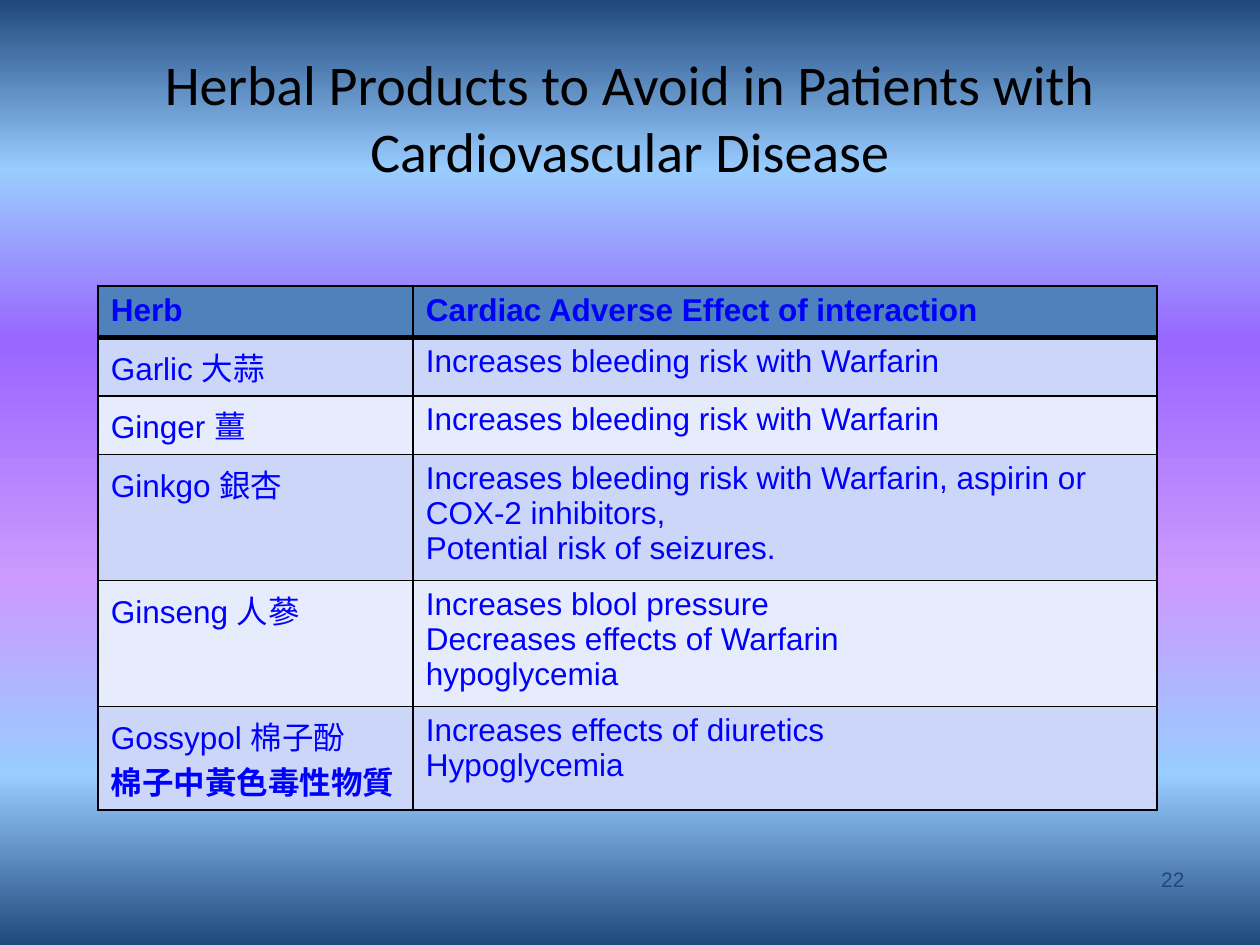
from lxml import etree
from pptx import Presentation
from pptx.dml.color import RGBColor
from pptx.enum import text
from pptx.oxml import ns
from pptx.util import Cm, Pt

COLORS = {
    "title": "000000", "border": "000000", "body": "0000FF", "number": "1F497D",
    "header": "4F81BD", "odd": "CBD6F9", "even": "E7ECFC",
}
GRADIENT = [(0, "1F497D"), (18, "99CCFF"), (36, "9966FF"),
            (61, "CC99FF"), (82, "99CCFF"), (100, "1F497D")]
TITLE = "Herbal Products to Avoid in Patients with Cardiovascular Disease"
NUMBER = "22"
ROWS = [
    (["Herb"], ["Cardiac Adverse Effect of interaction"]),
    (["Garlic 大蒜"], ["Increases bleeding risk with Warfarin"]),
    (["Ginger 薑"], ["Increases bleeding risk with Warfarin"]),
    (["Ginkgo 銀杏"],
     ["Increases bleeding risk with Warfarin, aspirin or COX-2 inhibitors,",
      "Potential risk of seizures."]),
    (["Ginseng 人蔘"],
     ["Increases blool pressure", "Decreases effects of Warfarin", "hypoglycemia"]),
    (["Gossypol 棉子酚", "棉子中黃色毒性物質"],
     ["Increases effects of diuretics", "Hypoglycemia"]),
]
BOLD = {"Herb", "Cardiac Adverse Effect of interaction", "棉子中黃色毒性物質"}
COLUMN_WIDTHS = [6.35, 14.99]
ROW_HEIGHTS = [1.04, 1.04, 1.04, 2.54, 2.54, 1.78]


def add_element(parent, tag, **attributes):
    return etree.SubElement(parent, ns.qn(tag), attributes)


def paint_background(slide):
    fill = slide.background.fill
    fill.gradient()
    fill.gradient_angle = 270
    stops = fill._fill._gradFill.find(ns.qn("a:gsLst"))
    for stop in list(stops):
        stops.remove(stop)
    for percent, color in GRADIENT:
        stop = add_element(stops, "a:gs", pos=str(percent * 1000))
        add_element(stop, "a:srgbClr", val=color)


def write_paragraphs(frame, lines, font, size, color, alignment):
    for index, line in enumerate(lines):
        paragraph = frame.add_paragraph() if index else frame.paragraphs[0]
        paragraph.alignment = alignment
        run = paragraph.add_run()
        run.text = line
        run.font.name = font
        run.font.size = Pt(size)
        run.font.bold = line in BOLD
        run.font.color.rgb = RGBColor.from_string(COLORS[color])


def set_borders(cell, widths):
    properties = cell._tc.get_or_add_tcPr()
    for side, width in widths.items():
        line = add_element(properties, f"a:ln{side}", w=str(Pt(width)))
        fill = add_element(line, "a:solidFill")
        add_element(fill, "a:srgbClr", val=COLORS["border"])


def add_herb_table(slide):
    shape = slide.shapes.add_table(
        len(ROWS), len(COLUMN_WIDTHS), Cm(1.98), Cm(5.77),
        Cm(sum(COLUMN_WIDTHS)), Cm(sum(ROW_HEIGHTS)))
    table = shape.table
    table.first_row = table.horz_banding = False
    for column, width in zip(table.columns, COLUMN_WIDTHS):
        column.width = Cm(width)
    for row, height in zip(table.rows, ROW_HEIGHTS):
        row.height = Cm(height)
    for row_index, contents in enumerate(ROWS):
        band = "header" if row_index == 0 else "odd" if row_index % 2 else "even"
        widths = {"L": 1, "R": 1, "T": 3 if row_index == 1 else 1,
                  "B": 3 if row_index == 0 else 1}
        for column_index, lines in enumerate(contents):
            cell = table.cell(row_index, column_index)
            set_borders(cell, widths)
            cell.fill.solid()
            cell.fill.fore_color.rgb = RGBColor.from_string(COLORS[band])
            write_paragraphs(cell.text_frame, lines, "Arial", 18, "body",
                             text.PP_ALIGN.LEFT)


def main():
    presentation = Presentation()
    presentation.slide_width, presentation.slide_height = Cm(25.4), Cm(19.05)
    slide = presentation.slides.add_slide(presentation.slide_layouts[5])
    paint_background(slide)

    title = slide.shapes.title
    title.left, title.top, title.width, title.height = (
        Cm(1.27), Cm(0.76), Cm(22.86), Cm(3.18))
    title.text_frame.vertical_anchor = text.MSO_ANCHOR.MIDDLE
    write_paragraphs(title.text_frame, [TITLE], "Calibri", 32, "title",
                     text.PP_ALIGN.CENTER)

    add_herb_table(slide)

    number = slide.shapes.add_textbox(Cm(18.21), Cm(17.35), Cm(5.92), Cm(1.27))
    number.text_frame.word_wrap = True
    write_paragraphs(number.text_frame, [NUMBER], "Arial", 12, "number",
                     text.PP_ALIGN.RIGHT)
    presentation.save("out.pptx")


if __name__ == "__main__":
    main()
